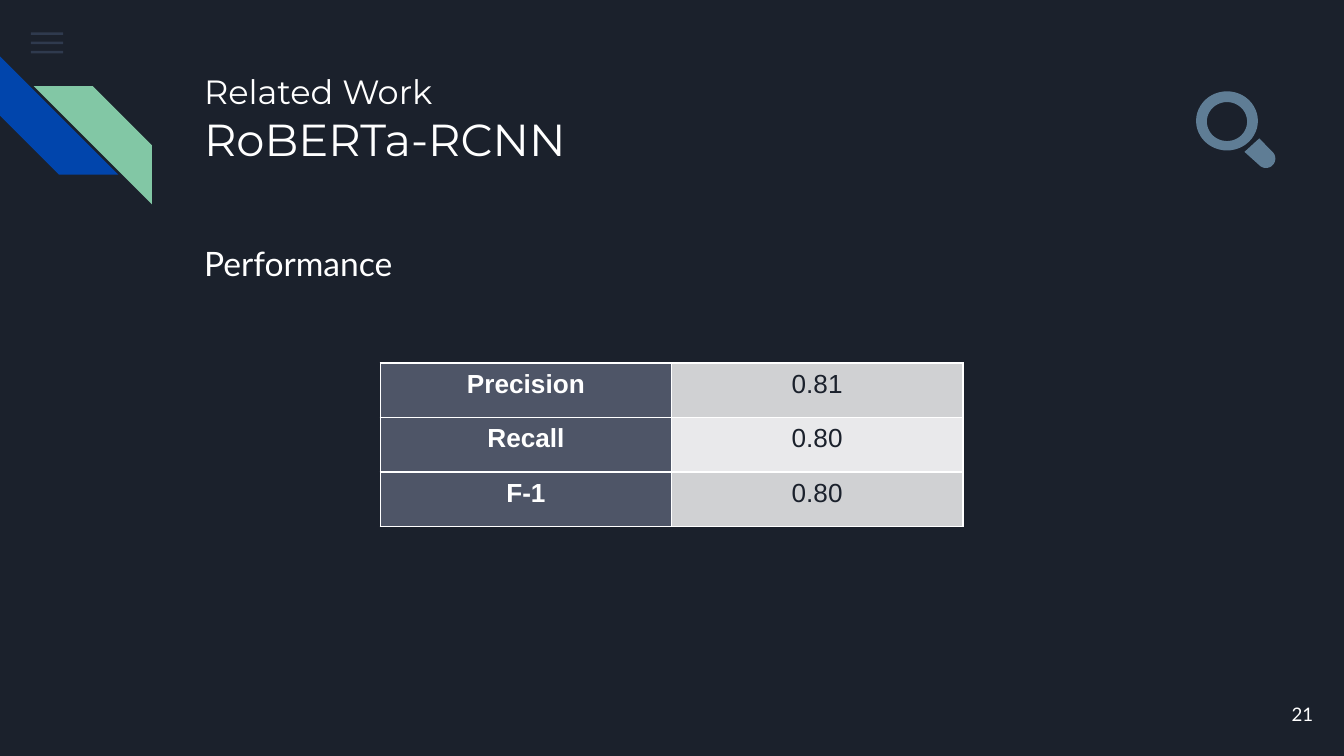
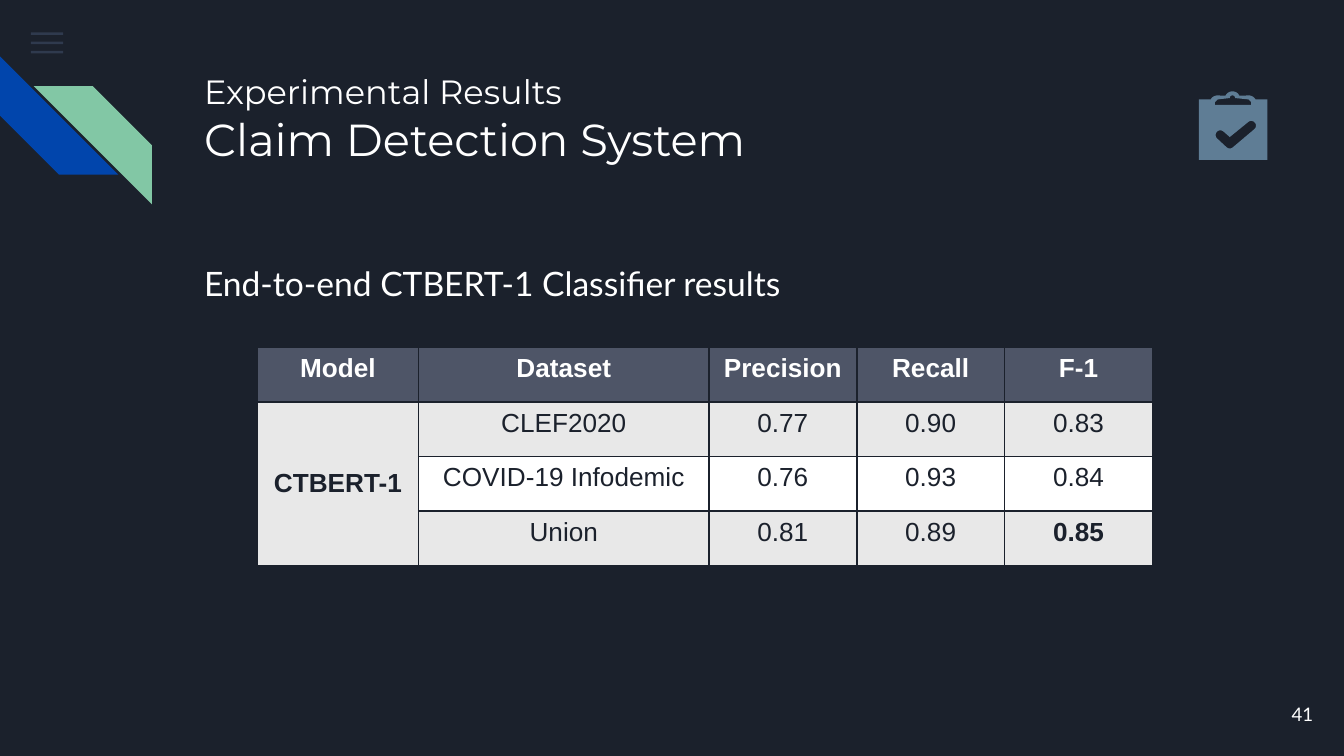
"""Build two dark slides with result tables."""
from math import cos, radians, sin

from lxml.etree import SubElement
from pptx import Presentation
from pptx.dml.color import RGBColor
from pptx.enum.shapes import MSO_SHAPE as Shape
from pptx.enum.text import MSO_ANCHOR as Anchor, PP_ALIGN as Align
from pptx.oxml.ns import qn
from pptx.util import Inches, Pt

NIGHT = RGBColor(0x1B, 0x21, 0x2C)
WHITE = RGBColor(0xFF, 0xFF, 0xFF)
STEEL = RGBColor(0x55, 0x68, 0x8B)
BLUE = RGBColor(0x01, 0x45, 0xAC)
GREEN = RGBColor(0x82, 0xC7, 0xA5)
ICON = RGBColor(0x5F, 0x7D, 0x95)
SLATE = RGBColor(0x4E, 0x55, 0x67)
GREY = RGBColor(0xD0, 0xD1, 0xD3)
PALE = RGBColor(0xE9, 0xE9, 0xEB)
MIST = RGBColor(0xE8, 0xE8, 0xE8)
COLS = 100
ROW = 4.06


def arc(x, y, wide, high, start, end, steps=16):
    turns = [radians(start + (end - start) * i / steps) for i in range(steps + 1)]
    return [(x + wide * cos(t), y + high * sin(t)) for t in turns]


class Deck:
    def __init__(self):
        self.file = Presentation()
        self.file.slide_width = Inches(10)
        self.file.slide_height = Inches(10) * 9 // 16
        self.unit = self.file.slide_width // COLS

    def grid(self, *spans):
        return [round(s * self.unit) for s in spans]

    def page(self, part, title, number):
        self.slide = self.file.slides.add_slide(self.file.slide_layouts[6])
        self.shapes = self.slide.shapes
        back = self.slide.background.fill
        back.solid()
        back.fore_color.rgb = NIGHT
        for i in range(3):
            bar = self.block(Shape.RECTANGLE, (2.3, 2.4 + 0.69 * i, 2.4, 0.2), STEEL)
            tone = bar.fill._xPr.find(".//" + qn("a:srgbClr"))
            SubElement(tone, qn("a:alpha"), val="36000")
        left = self.block(Shape.DIAGONAL_STRIPE, (0, 4.2, 8.8, 8.8), BLUE)
        left.rotation = 270
        right = self.block(Shape.DIAGONAL_STRIPE, (2.5, 6.4, 8.8, 8.8), GREEN)
        right._element.spPr.find(qn("a:xfrm")).set("flipH", "1")
        self.text((14.2, 4.3, 77, 10), [(part, 18), (title, 24)], "Montserrat")
        foot = self.text((92.7, 51, 6, 4.3), [(number, 10)], align=Align.RIGHT)
        foot.vertical_anchor = Anchor.MIDDLE

    def paint(self, shape, color):
        shape.shadow.inherit = False
        shape.fill.solid()
        shape.fill.fore_color.rgb = color
        shape.line.fill.background()
        return shape

    def block(self, kind, box, color):
        return self.paint(self.shapes.add_shape(kind, *self.grid(*box)), color)

    def form(self, *loops):
        loops = [[self.grid(*dot) for dot in loop] for loop in loops]
        pen = self.shapes.build_freeform(*loops[0][0], scale=1.0)
        for i, loop in enumerate(loops):
            if i:
                pen.move_to(*loop[0])
            pen.add_line_segments(loop[1:], close=True)
        return self.paint(pen.convert_to_shape(), ICON)

    def text(self, box, runs, font="Lato", align=Align.LEFT, gap=None):
        frame = self.shapes.add_textbox(*self.grid(*box)).text_frame
        frame.word_wrap = True
        frame.margin_left = frame.margin_right = self.unit
        frame.margin_top = frame.margin_bottom = self.unit
        para = frame.paragraphs[0]
        para.alignment = align
        if gap:
            para.line_spacing = gap
        self.style(para, font, WHITE)
        for i, (words, size) in enumerate(runs):
            if i:
                para.add_line_break()
            run = para.add_run()
            run.text = words
            if len(runs) > 1:
                run.font.size = Pt(size)
            else:
                para.font.size = Pt(size)
        return frame

    def lead(self, words, gap=None):
        self.text((14.2, 17.1, 77, 31.8), [(words, 18)], gap=gap)

    def style(self, para, name, color):
        para.font.name = name
        para.font.color.rgb = color

    def table(self, spot, wide, rows, look, edge):
        box = self.grid(*spot, sum(wide), ROW * len(rows))
        table = self.shapes.add_table(len(rows), len(wide), *box).table
        table.first_row = table.horz_banding = False
        for col, span in zip(table.columns, wide):
            col.width = self.grid(span)[0]
        for r, row in enumerate(rows):
            table.rows[r].height = self.grid(ROW)[0]
            for c, words in enumerate(row):
                fill, ink, bold = look(r, c)
                self.cell(table.cell(r, c), words, fill, ink, bold, edge)
        return table

    def cell(self, cell, words, fill, ink, bold, edge):
        for side in "LRTB":
            line = SubElement(cell._tc.get_or_add_tcPr(), qn("a:ln" + side), w=str(Pt(1)))
            SubElement(SubElement(line, qn("a:solidFill")), qn("a:srgbClr"), val=str(edge))
        cell.fill.solid()
        cell.fill.fore_color.rgb = fill
        cell.text = words
        para = cell.text_frame.paragraphs[0]
        para.alignment = Align.CENTER
        self.style(para, "Arial", ink)
        para.font.size = Pt(14)
        para.font.bold = bold

    def lens(self):
        grip = [(93.7, 10.3), (92.6, 11.3)] + arc(94.2, 11.8, 0.7, 0.7, 135, -45)
        self.form(grip)
        self.form(arc(91.3, 9, 2.3, 2.2, 0, 360, 48), arc(91.3, 9.05, 1.5, 1.45, 360, 0, 48))

    def board(self):
        rim = [(89.2, 7.4), *arc(90.6, 7.7, 0.6, 0.6, 210, 270),
               *arc(91.7, 7.3, 0.55, 0.5, 200, 340),
               *arc(92.9, 7.7, 0.6, 0.6, 270, 330),
               (94.3, 7.4), (94.3, 11.9), (89.2, 11.9)]
        slot = [(90.4, 7.8), (90.4, 7.6), (90.6, 7.4), *arc(91.7, 7.3, 0.2, 0.2, 180, 360),
                (92.9, 7.4), (93.1, 7.6), (93.1, 7.8)]
        tick = [*arc(90.8, 10.05, 0.35, 0.35, 135, 315), (91.5, 10.2),
                *arc(93.1, 9.35, 0.35, 0.35, 230, 410),
                *arc(91.5, 10.7, 0.35, 0.35, 50, 135)]
        self.form(rim, slot, tick)


def scores(row, col):
    if col == 0:
        return SLATE, WHITE, True
    return (PALE if row % 2 else GREY), NIGHT, False


def results(row, col):
    if row == 0:
        return SLATE, WHITE, True
    fill = WHITE if row == 2 and col else MIST
    return fill, NIGHT, col == 0 or (row, col) == (3, 4)


def main():
    deck = Deck()
    deck.page("Related Work", "RoBERTa-RCNN", "21")
    deck.lead("Performance")
    deck.lens()
    deck.table((28.3, 27), [21.67] * 2,
               [("Precision", "0.81"), ("Recall", "0.80"), ("F-1", "0.80")],
               scores, WHITE)

    deck.page("Experimental Results", "Claim Detection System", "41")
    deck.lead("End-to-end CTBERT-1 Classifier results", 1.5)
    deck.board()
    table = deck.table((19.15, 25.85), [12, 21.6, 11, 11, 11],
                       [("Model", "Dataset", "Precision", "Recall", "F-1"),
                        ("CTBERT-1", "CLEF2020", "0.77", "0.90", "0.83"),
                        ("", "COVID-19 Infodemic", "0.76", "0.93", "0.84"),
                        ("", "Union", "0.81", "0.89", "0.85")],
                       results, NIGHT)
    model = table.cell(1, 0)
    model.merge(table.cell(3, 0))
    model.vertical_anchor = Anchor.MIDDLE
    deck.file.save("out.pptx")


if __name__ == "__main__":
    main()
